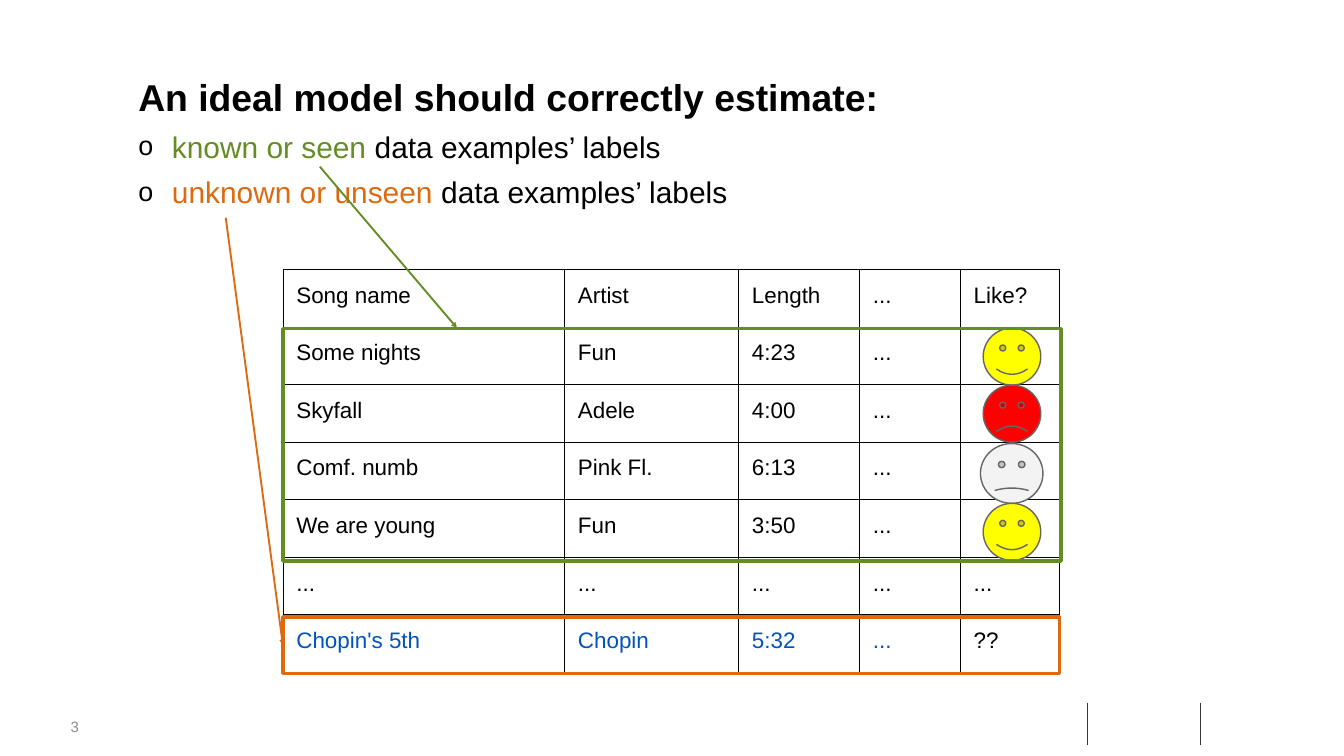
"""Slide on what an ideal model should estimate, with a song table."""
from lxml.etree import SubElement
from pptx import Presentation
from pptx.dml.color import RGBColor
from pptx.enum.shapes import MSO_CONNECTOR, MSO_SHAPE
from pptx.enum.text import MSO_ANCHOR
from pptx.oxml import parse_xml
from pptx.oxml.ns import nsdecls, qn
from pptx.util import Pt


def rgb(color):
    return RGBColor.from_string(color)


def add_run(p, text, size, color, bold=False):
    r = p.add_run()
    r.text = text
    r.font.name = "Arial"
    r.font.size = Pt(size)
    r.font.bold = bold
    r.font.color.rgb = rgb(color)


GREEN, ORANGE, BLACK, BLUE = "648D26", "DE6A10", "000000", "0052BF"

prs = Presentation()
prs.slide_width, prs.slide_height = Pt(1440), Pt(810)
s = prs.slides.add_slide(prs.slide_layouts[6])

sp = s.shapes.add_textbox(Pt(75.6), Pt(769), Pt(42.5), Pt(19.4))
tf = sp.text_frame
tf.word_wrap = True
tf.vertical_anchor = MSO_ANCHOR.MIDDLE
tf.margin_left = tf.margin_right = tf.margin_top = tf.margin_bottom = 0
add_run(tf.paragraphs[0], "3", 16, "8C8C8C")

sp = s.shapes.add_textbox(Pt(141.1), Pt(76.3), Pt(831.6), Pt(196.6))
tf = sp.text_frame
tf.word_wrap = True
add_run(tf.paragraphs[0], "An ideal model should correctly estimate:", 40, BLACK, True)
for text, color in [("known or seen", GREEN), ("unknown or unseen", ORANGE)]:
    p = tf.add_paragraph()
    p.level = 1
    p.space_before = Pt(10)
    pPr = p._p.get_or_add_pPr()
    pPr.set("marL", str(Pt(36)))
    pPr.set("indent", str(-Pt(36)))
    SubElement(SubElement(pPr, qn("a:buClr")), qn("a:srgbClr"), val=BLACK)
    SubElement(pPr, qn("a:buSzPct"), val="90000")
    SubElement(pPr, qn("a:buFont"), typeface="Arial")
    SubElement(pPr, qn("a:buChar"), char="o")
    add_run(p, text, 32, color)
    add_run(p, " data examples’ labels", 32, BLACK)

rows = [
    ["Song name", "Artist", "Length", "...", "Like?"],
    ["Some nights", "Fun", "4:23", "...", ""],
    ["Skyfall", "Adele", "4:00", "...", ""],
    ["Comf. numb", "Pink Fl.", "6:13", "...", ""],
    ["We are young", "Fun", "3:50", "...", ""],
    ["...", "...", "...", "...", "..."],
    ["Chopin's 5th", "Chopin", "5:32", "...", "??"],
]
widths = [301.7, 186.5, 129.6, 108, 106.5]
table = s.shapes.add_table(len(rows), len(widths), Pt(303.1), Pt(288.7),
                           Pt(sum(widths)), Pt(432)).table
table.first_row = table.horz_banding = False
for column, width in zip(table.columns, widths):
    column.width = Pt(width)
for i, row in enumerate(rows):
    table.rows[i].height = Pt(61.71)
    for j, text in enumerate(row):
        cell = table.cell(i, j)
        cell.margin_left = cell.margin_right = Pt(14.4)
        cell.margin_top = cell.margin_bottom = Pt(14.4)
        tcPr = cell._tc.get_or_add_tcPr()
        for side in "LRTB":
            tcPr.append(parse_xml(
                f'<a:ln{side} {nsdecls("a")} w="12700"><a:solidFill>'
                f'<a:srgbClr val="{BLACK}"/></a:solidFill></a:ln{side}>'))
        cell.fill.background()
        if text:
            color = BLUE if i == len(rows) - 1 and j < len(row) - 1 else BLACK
            add_run(cell.text_frame.paragraphs[0], text, 24, color)

faces = [
    (1053.4, 351.4, 61.7, 61.2, "FFFF00", 0.0465),
    (1053.4, 412.6, 61.7, 61.2, "FF0000", -0.0465),
    (1050.5, 475.2, 67, 64.1, "F3F3F3", -0.02),
    (1053.4, 539.3, 61.7, 61.2, "FFFF00", 0.0465),
]
for x, y, w, h, color, smile in faces:
    sp = s.shapes.add_shape(MSO_SHAPE.SMILEY_FACE, Pt(x), Pt(y), Pt(w), Pt(h))
    sp.shadow.inherit = False
    sp.adjustments[0] = smile
    sp.fill.solid()
    sp.fill.fore_color.rgb = rgb(color)
    sp.line.color.rgb = rgb("666666")
    sp.line.width = Pt(1.5)

for y, w, h, color in [(352.1, 833.8, 249.1, GREEN), (661, 832.3, 60.5, ORANGE)]:
    frame = s.shapes.add_shape(MSO_SHAPE.RECTANGLE, Pt(303.1), Pt(y), Pt(w), Pt(h))
    frame.shadow.inherit = False
    frame.fill.background()
    frame.line.color.rgb = rgb(color)
    frame.line.width = Pt(3.5)

lines = [
    (1165, 753.1, 1165, 798.5, "383838", 1),
    (1285.9, 753.1, 1285.9, 798.5, "383838", 1),
    (342.7, 178.6, 489.6, 351.4, GREEN, 2),
    (241.9, 233.3, 303.1, 691.2, ORANGE, 2),
]
for x1, y1, x2, y2, color, width in lines:
    line = s.shapes.add_connector(MSO_CONNECTOR.STRAIGHT, Pt(x1), Pt(y1), Pt(x2), Pt(y2))
    line.line.color.rgb = rgb(color)
    line.line.width = Pt(width)
    if color != "383838":
        SubElement(line.line._get_or_add_ln(), qn("a:tailEnd"), type="triangle")
    SubElement(line._element.spPr, qn("a:effectLst"))
    if color == ORANGE:
        line.end_connect(frame, 1)

prs.save("out.pptx")
